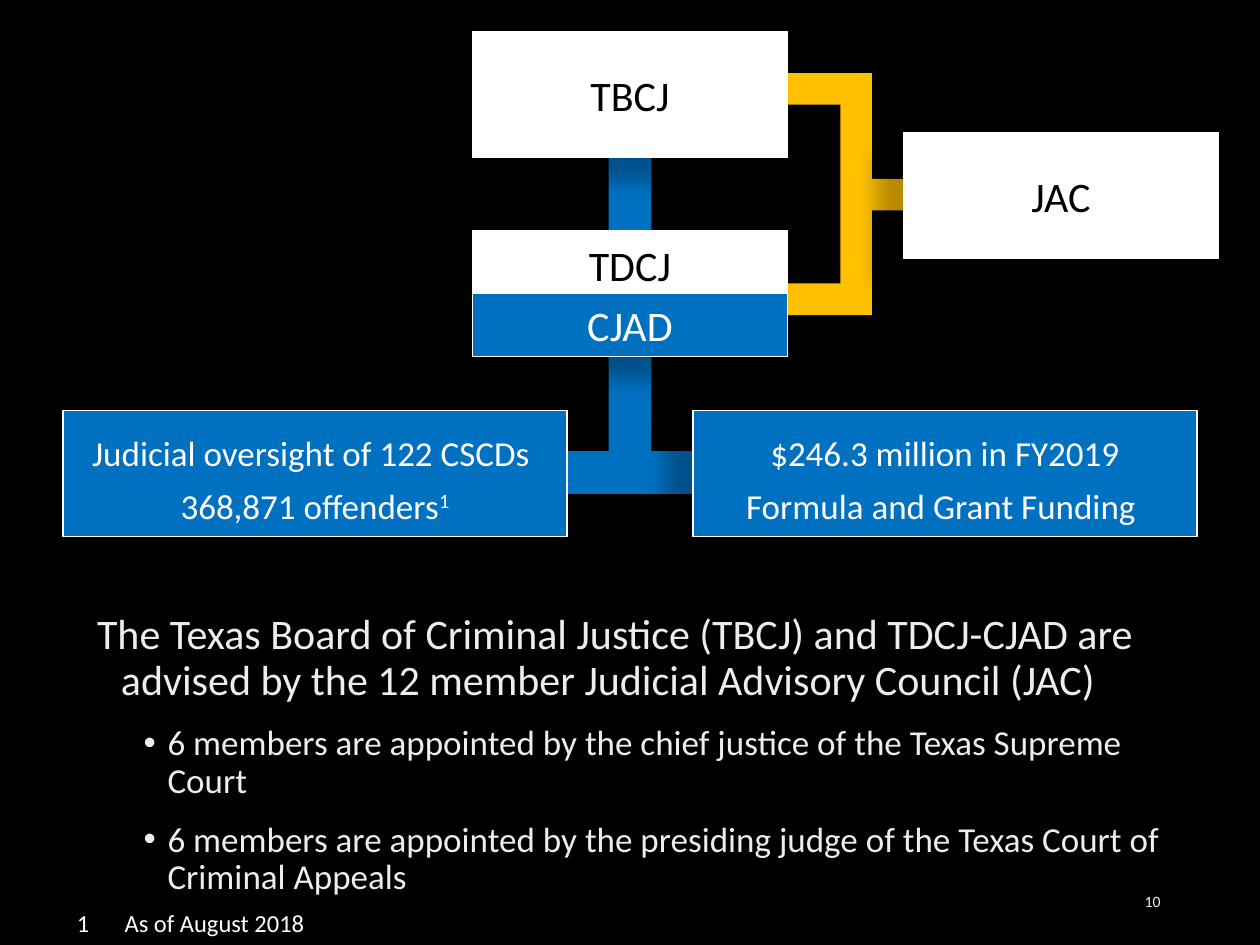
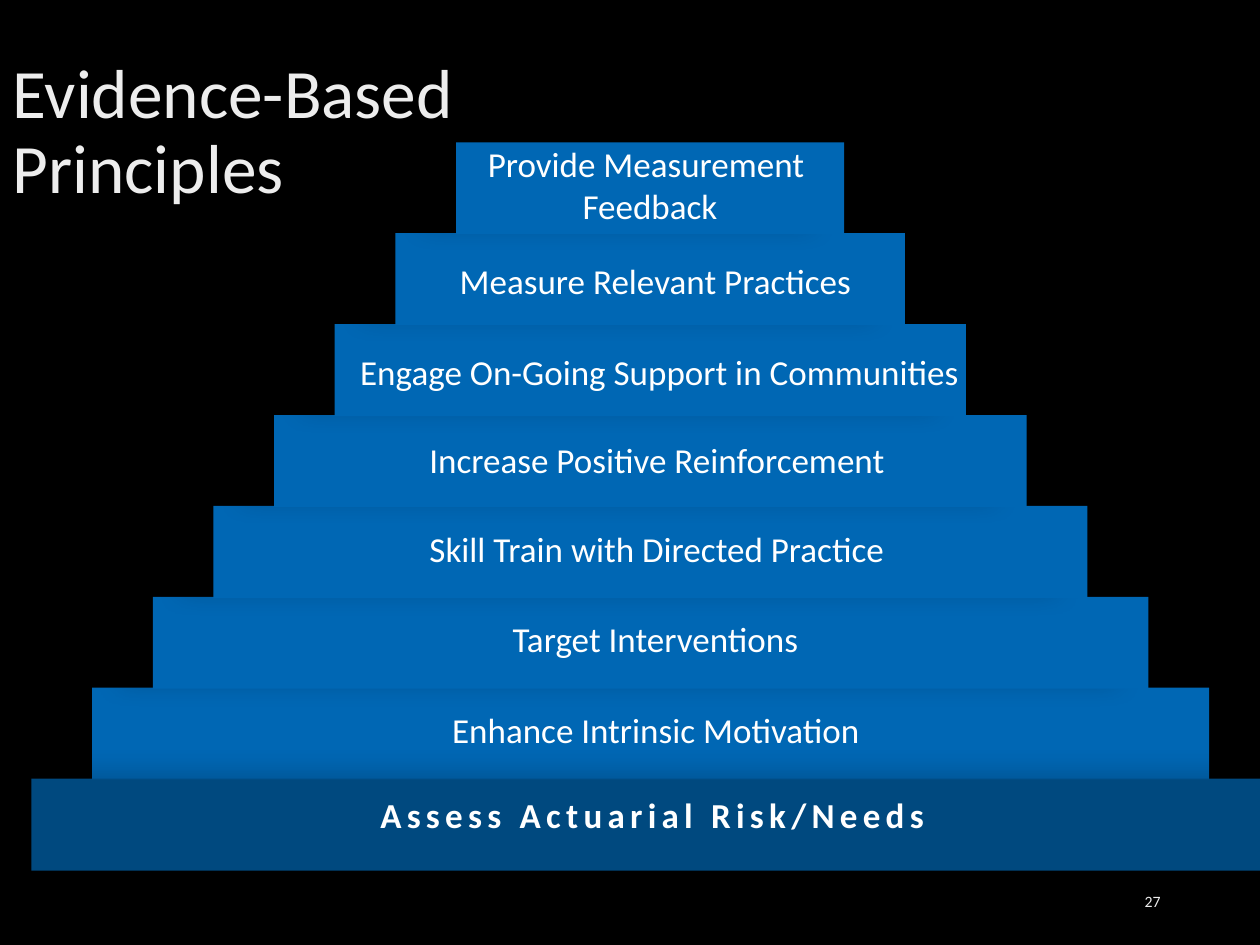
from lxml import etree
from pptx import Presentation
from pptx.dml.color import RGBColor
from pptx.enum import shapes, text
from pptx.oxml import ns
from pptx.util import Inches, Pt

BLACK = RGBColor(0x00, 0x00, 0x00)
WHITE = RGBColor(0xFF, 0xFF, 0xFF)
SOFT_WHITE = RGBColor(0xED, 0xED, 0xED)
BLUE = RGBColor(0x00, 0x70, 0xC0)
STEP_BLUE = RGBColor(0x00, 0x67, 0xB4)
BASE_BLUE = RGBColor(0x00, 0x4D, 0x86)
GOLD = RGBColor(0xFF, 0xC0, 0x00)
FONT = "Calibri"
LEFT, CENTER, RIGHT = text.PP_ALIGN.LEFT, text.PP_ALIGN.CENTER, text.PP_ALIGN.RIGHT
MIDDLE, TOP = text.MSO_ANCHOR.MIDDLE, text.MSO_ANCHOR.TOP
BOX_SHADOW = dict(alpha=28, blur=11.8, distance=19.7, angle=141)
STEP_SHADOW = dict(alpha=18, blur=14.5, distance=19, angle=192)


def write(frame, value, size=20, color=WHITE, align=LEFT, spacing=None, before=None,
          level=0, indent=None, hanging=0, bullet=None, bold=False, tracking=None,
          superscript=None):
    """Add a paragraph to the frame, filling its empty first one before adding more."""
    first = frame.paragraphs[0]
    para = frame.add_paragraph() if first.runs else first
    para.alignment = align
    para.level = level
    if spacing:
        para.line_spacing = spacing
    if before is not None:
        para.space_before = Pt(before)
    if indent is not None:
        props = para._p.get_or_add_pPr()
        props.set("marL", str(Inches(indent)))
        props.set("indent", str(-Inches(hanging)))
        tag, attributes = bullet or ("a:buNone", {})
        etree.SubElement(props, ns.qn(tag), attributes)
    for part in filter(None, (value, superscript)):
        span = para.add_run()
        span.text = part
        span.font.name, span.font.size, span.font.bold = FONT, Pt(size), bold
        span.font.color.rgb = color
        if tracking:
            span.font._element.set("spc", str(tracking * 100))
    if superscript:
        span.font._element.set("baseline", "30000")


def paint(shape, fill, line=None, shadow=None):
    shape.fill.solid()
    shape.fill.fore_color.rgb = fill
    if line is None:
        shape.line.fill.background()
    else:
        shape.line.color.rgb = line
        shape.line.width = Pt(0.75)
    shape.shadow.inherit = False
    if shadow:
        effects = shape._element.spPr.find(ns.qn("a:effectLst"))
        outer = etree.SubElement(effects, ns.qn("a:outerShdw"), {
            "blurRad": str(Pt(shadow["blur"])), "dist": str(Pt(shadow["distance"])),
            "dir": str(shadow["angle"] * 60000), "algn": "ctr", "rotWithShape": "0"})
        tint = etree.SubElement(outer, ns.qn("a:srgbClr"), val=str(BLACK))
        etree.SubElement(tint, ns.qn("a:alpha"), val=str(shadow["alpha"] * 1000))


deck = Presentation()
deck.slide_width, deck.slide_height = Inches(10), Inches(7.5)
deck.slide_master.background.fill.solid()
deck.slide_master.background.fill.fore_color.rgb = BLACK

# Organisation chart
chart_page = deck.slides.add_slide(deck.slide_layouts[1])
chart_title = chart_page.shapes.title._element
chart_title.getparent().remove(chart_title)

advisory_link = [(6, 0.58), (6.92, 0.58), (6.92, 1.42), (7.42, 1.42), (7.42, 1.67),
                 (6.92, 1.67), (6.92, 2.5), (6, 2.5), (6, 2.25), (6.67, 2.25),
                 (6.67, 0.83), (6, 0.83)]
command_link = [(4.83, 0.58), (5.17, 0.58), (5.17, 3.58), (5.58, 3.58), (5.58, 3.92),
                (4.33, 3.92), (4.33, 3.58), (4.83, 3.58)]
for outline, fill in ((advisory_link, GOLD), (command_link, BLUE)):
    points = [(Inches(x), Inches(y)) for x, y in outline]
    builder = chart_page.shapes.build_freeform(*points[0])
    builder.add_line_segments(points[1:], close=True)
    paint(builder.convert_to_shape(), fill)

body = chart_page.placeholders[1]
body.left, body.top, body.width, body.height = map(Inches, (0.67, 4.82, 9, 2.08))
body.text_frame.auto_size = text.MSO_AUTO_SIZE.NONE
write(body.text_frame, "The Texas Board of Criminal Justice (TBCJ) and TDCJ-CJAD are "
      "advised by the 12 member Judicial Advisory Council (JAC)",
      size=24, color=SOFT_WHITE, spacing=0.9, before=0, indent=0.19, hanging=0.19)
for appointer in ("chief justice of the Texas Supreme Court",
                  "presiding judge of the Texas Court of Criminal Appeals"):
    write(body.text_frame, f"6 members are appointed by the {appointer}",
          color=SOFT_WHITE, spacing=0.9, before=12, level=1, indent=0.56, hanging=0.19,
          bullet=("a:buChar", {"char": "•"}))

UNIT = dict(size=24, color=BLACK)
DETAIL = dict(size=20, color=WHITE, spacing=1.25)
boxes = [
    ((3.75, 0.25, 2.5, 1), WHITE, MIDDLE, [("TBCJ", UNIT)]),
    ((3.75, 1.83, 2.5, 0.5), WHITE, TOP, [("TDCJ", UNIT)]),
    ((3.75, 2.33, 2.5, 0.5), BLUE, MIDDLE, [("CJAD", dict(size=24))]),
    ((0.5, 3.26, 4, 1), BLUE, MIDDLE,
     [("Judicial oversight of 122 CSCDs ", DETAIL),
      ("368,871 offenders", dict(DETAIL, superscript="1"))]),
    ((5.5, 3.26, 4, 1), BLUE, MIDDLE,
     [("$246.3 million in FY2019 Formula and Grant Funding ", DETAIL)]),
    ((7.17, 1.05, 2.5, 1), WHITE, MIDDLE, [("JAC", UNIT)]),
]
for place, fill, anchor, lines in boxes:
    box = chart_page.shapes.add_shape(shapes.MSO_SHAPE.RECTANGLE, *map(Inches, place))
    paint(box, fill, line=WHITE, shadow=BOX_SHADOW)
    frame = box.text_frame
    frame.word_wrap = True
    frame.vertical_anchor = anchor
    frame.margin_left = frame.margin_right = Inches(0.13)
    frame.margin_top = frame.margin_bottom = Inches(0.07)
    for line, style in lines:
        write(frame, line, align=CENTER, **style)

footnote = chart_page.shapes.add_textbox(*map(Inches, (0.5, 7.16, 5.5, 0.34)))
footnote.text_frame.word_wrap = True
footnote.text_frame.margin_left = Inches(0.11)
write(footnote.text_frame, "As of August 2018", size=14, indent=0.38, hanging=0.38,
      bullet=("a:buAutoNum", {"type": "arabicPlain"}))

# Pyramid of principles
pyramid_page = deck.slides.add_slide(deck.slide_layouts[5])

# Steps count up from the base; the base is drawn over the step above it
for step in (1, 0, 2, 3, 4, 5, 6, 7):
    rise = step / 7
    place = (0.25 + 3.37 * rise, 6.18 - 5.05 * rise, 9.83 - 6.75 * rise, 0.73)
    slab = pyramid_page.shapes.add_shape(shapes.MSO_SHAPE.RECTANGLE, *map(Inches, place))
    paint(slab, STEP_BLUE if step else BASE_BLUE, shadow=STEP_SHADOW)
    if step == 0:
        tint = slab._element.spPr.find(ns.qn("a:solidFill")).find(ns.qn("a:srgbClr"))
        etree.SubElement(tint, ns.qn("a:alpha"), val="95000")

principles = [
    (2.92, 6.25, 4.6, ["Assess Actuarial Risk/Needs"], dict(bold=True, tracking=3)),
    (3.49, 5.57, 3.47, ["Enhance Intrinsic Motivation"], {}),
    (3.97, 4.85, 2.49, ["Target Interventions"], {}),
    (3.31, 4.14, 3.85, ["Skill Train with Directed Practice"], {}),
    (3.31, 3.43, 3.85, ["Increase Positive Reinforcement"], {}),
    (2.76, 2.73, 4.99, ["Engage On-Going Support in Communities"], {}),
    (3.55, 2.01, 3.35, ["Measure Relevant Practices"], {}),
    (3.76, 1.08, 2.8, ["Provide Measurement ", "Feedback"], dict(align=CENTER)),
]
for left, top, width, lines, style in principles:
    height = 0.11 + 0.33 * len(lines)
    label = pyramid_page.shapes.add_textbox(*map(Inches, (left, top, width, height)))
    label.text_frame.word_wrap = False
    for line in lines:
        write(label.text_frame, line, **style)

title = pyramid_page.shapes.title
title.left, title.top, title.width, title.height = map(Inches, (0, 0.25, 4.17, 1.62))
title.text_frame.auto_size = text.MSO_AUTO_SIZE.NONE
title.text_frame.vertical_anchor = MIDDLE
write(title.text_frame, "Evidence-Based Principles", size=39.6, color=SOFT_WHITE,
      spacing=0.9)

for page, number in ((chart_page, "10"), (pyramid_page, "27")):
    box = page.shapes.add_textbox(*map(Inches, (7.06, 6.95, 2.25, 0.4)))
    box.text_frame.word_wrap = True
    box.text_frame.vertical_anchor = MIDDLE
    write(box.text_frame, number, size=9, color=SOFT_WHITE, align=RIGHT)

deck.save("out.pptx")
